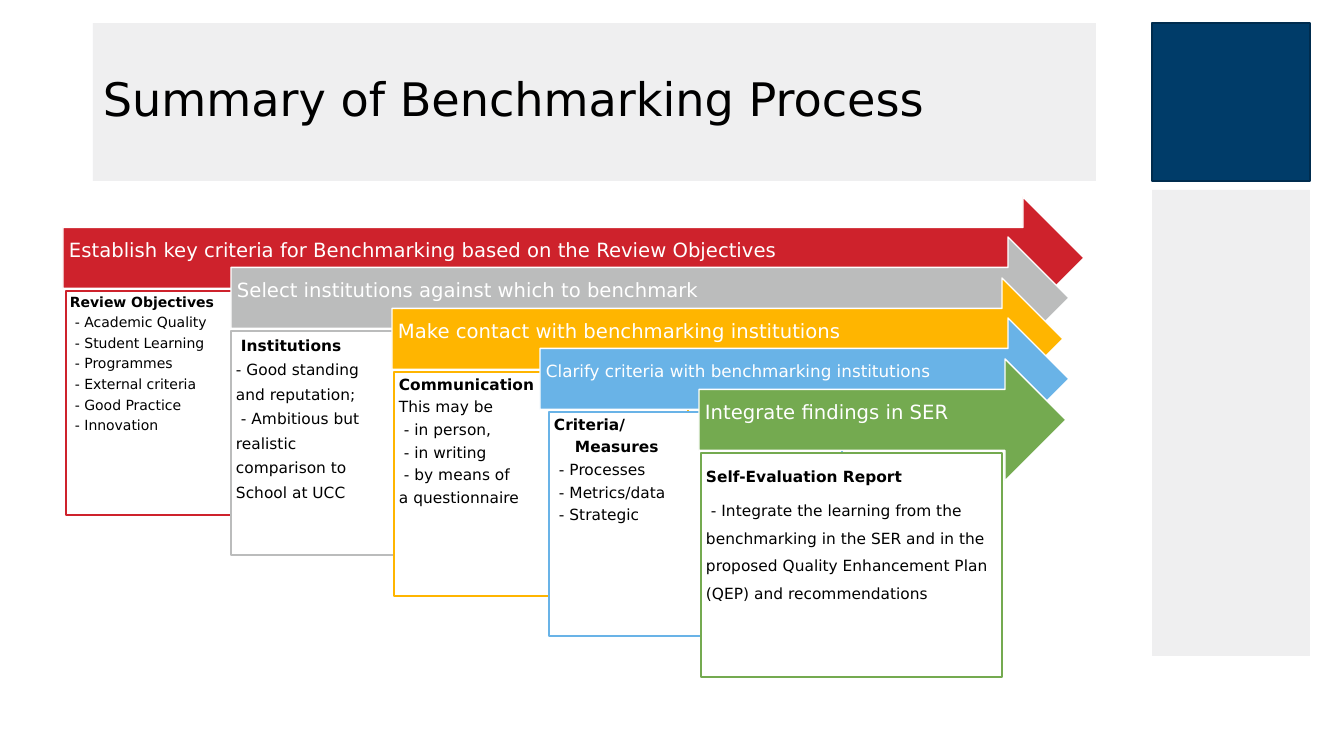
from dataclasses import dataclass
from typing import NamedTuple

from pptx import Presentation
from pptx.dml.color import RGBColor
from pptx.enum.shapes import MSO_SHAPE
from pptx.enum.text import MSO_ANCHOR, PP_ALIGN
from pptx.util import Emu, Pt

RECTANGLE = MSO_SHAPE.RECTANGLE
RIGHT_ARROW = MSO_SHAPE.RIGHT_ARROW
TOP = MSO_ANCHOR.TOP
MIDDLE = MSO_ANCHOR.MIDDLE
LEFT = PP_ALIGN.LEFT
EMU_PER_PX = 914400 / 100.8


@dataclass(frozen=True)
class Theme:
    font: str = "DejaVu Sans"
    panel: str = "EFEFF0"
    navy: str = "003C69"
    navy_edge: str = "002C4E"
    white: str = "FFFFFF"
    black: str = "000000"
    red: str = "CE222C"
    grey: str = "BBBCBC"
    amber: str = "FFB500"
    blue: str = "69B3E7"
    green: str = "74AA50"
    title_size: int = 33
    heading_size: int = 14
    small_heading_size: int = 12
    body_size: int = 11
    small_body_size: int = 10
    line_width: int = 1
    tight: float = 0.9
    gap_ratio: float = 0.39


THEME = Theme()


class Box(NamedTuple):
    left: int
    top: int
    width: int
    height: int


class Line(NamedTuple):
    text: str
    indent: int = 0
    bold: bool = False


@dataclass(frozen=True)
class Step:
    color: str
    heading: str
    lines: tuple
    arrow_left: int
    arrow_width: int
    card_left: int
    card_width: int
    heading_size: int = THEME.heading_size
    body_size: int = THEME.body_size
    spacing: float = THEME.tight
    inset: int = 5


def title_line(text, indent=0):
    return Line(text, indent, True)


def item(text):
    return Line("- " + text, 5)


STEPS = (
    Step(THEME.red, "Establish key criteria for Benchmarking based on the Review Objectives",
         (title_line("Review Objectives"), item("Academic Quality"), item("Student Learning"),
          item("Programmes"), item("External criteria"), item("Good Practice"),
          item("Innovation")),
         63, 1021, 66, 332, body_size=THEME.small_body_size, inset=4),
    Step(THEME.grey, "Select institutions against which to benchmark",
         (title_line("Institutions", 5), Line("- Good standing"), Line("and reputation;"),
          item("Ambitious but"), Line("realistic"), Line("comparison to"),
          Line("School at UCC")),
         231, 838, 231, 310, spacing=1.0),
    Step(THEME.amber, "Make contact with benchmarking institutions",
         (title_line("Communication"), Line("This may be"), item("in person,"),
          item("in writing"), item("by means of"), Line("a questionnaire")),
         392, 671, 394, 294),
    Step(THEME.blue, "Clarify criteria with benchmarking institutions",
         (title_line("Criteria/"), title_line("Measures", 21), item("Processes"),
          item("Metrics/data"), item("Strategic")),
         540, 529, 549, 293, heading_size=THEME.small_heading_size),
    Step(THEME.green, "Integrate findings in SER",
         (title_line("Self-Evaluation Report"),
          item("Integrate the learning from the benchmarking in the SER and in the "
               "proposed Quality Enhancement Plan (QEP) and recommendations")),
         699, 367, 701, 301, spacing=1.5),
)


def px(length):
    return Emu(round(length * EMU_PER_PX))


def color(value):
    return RGBColor.from_string(value)


def add_block(page, box, fill, line=None, preset=RECTANGLE):
    shape = page.shapes.add_shape(preset, *map(px, box))
    shape.shadow.inherit = False
    shape.fill.solid()
    shape.fill.fore_color.rgb = color(fill)
    if line:
        shape.line.color.rgb = color(line)
        shape.line.width = Pt(THEME.line_width)
    else:
        shape.line.fill.background()
    return shape


def write(shape, lines, size, ink=THEME.black, insets=(5, 5, 5, 5), anchor=TOP,
          spacing=THEME.tight, gap=THEME.gap_ratio):
    frame = shape.text_frame
    frame.word_wrap = True
    frame.vertical_anchor = anchor
    (frame.margin_left, frame.margin_top,
     frame.margin_right, frame.margin_bottom) = map(px, insets)
    for index, line in enumerate(lines):
        para = frame.add_paragraph() if index else frame.paragraphs[0]
        para.alignment = LEFT
        para.line_spacing = spacing
        para.space_after = Pt(size * gap)
        if line.indent:
            properties = para._p.get_or_add_pPr()
            properties.set("marL", "0")
            properties.set("indent", str(px(line.indent)))
        span = para.add_run()
        span.text = line.text
        span.font.name = THEME.font
        span.font.size = Pt(size)
        span.font.bold = line.bold
        span.font.color.rgb = color(ink)


def add_title(page, box):
    write(add_block(page, box, THEME.panel), [Line("Summary of Benchmarking Process")],
          THEME.title_size, insets=(10, 5, 10, 5), anchor=MIDDLE, gap=0)


def add_sidebar(page, box):
    square = box.width
    panel_offset = square + 9
    add_block(page, Box(box.left, box.top + panel_offset, square, box.height - panel_offset),
              THEME.panel)
    add_block(page, Box(box.left, box.top, square, square), THEME.navy, THEME.navy_edge)


def add_step(page, step, top):
    arrow = add_block(page, Box(step.arrow_left, top, step.arrow_width, 122),
                      step.color, THEME.white, RIGHT_ARROW)
    write(arrow, [Line(step.heading)], step.heading_size, ink=THEME.white,
          insets=(6, 6, 28, 19), anchor=MIDDLE)
    card = add_block(page, Box(step.card_left, top + 94, step.card_width, 224),
                     THEME.white, step.color)
    write(card, step.lines, step.body_size, insets=(step.inset,) * 4, spacing=step.spacing)


def add_process(page, top):
    for index, step in enumerate(STEPS):
        add_step(page, step, top + index * 81 // 2)


def main():
    deck = Presentation()
    deck.slide_width, deck.slide_height = px(1344), px(756)
    page = deck.slides.add_slide(deck.slide_layouts[6])
    add_sidebar(page, Box(1152, 23, 158, 633))
    add_title(page, Box(93, 23, 1003, 158))
    add_process(page, 197)
    deck.save("out.pptx")


if __name__ == "__main__":
    main()
